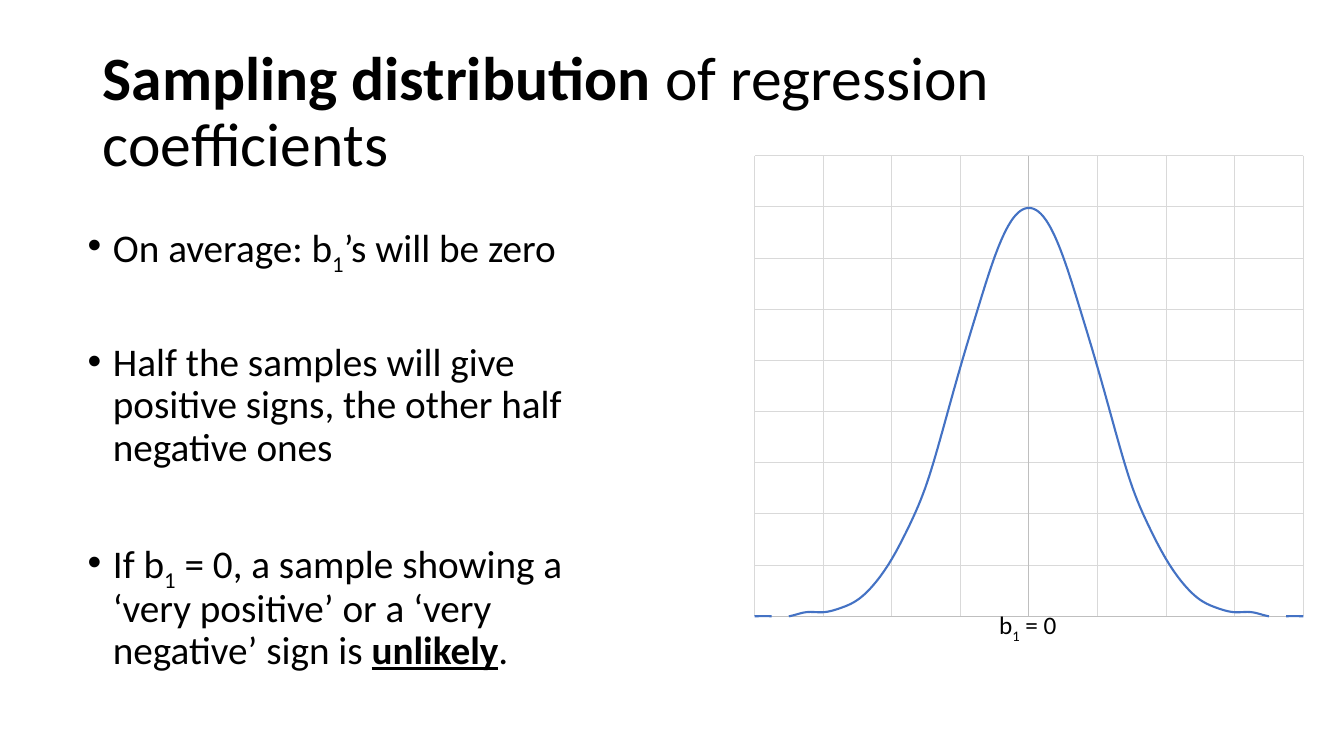
"""Build a slide on the sampling distribution of regression coefficients."""
from dataclasses import dataclass
from math import exp

from pptx import Presentation
from pptx.chart.data import XyChartData
from pptx.dml.color import RGBColor
from pptx.enum.chart import XL_CHART_TYPE, XL_TICK_LABEL_POSITION, XL_TICK_MARK
from pptx.enum.text import MSO_ANCHOR, MSO_AUTO_SIZE, PP_ALIGN
from pptx.util import Inches, Pt

SMOOTH = XL_CHART_TYPE.XY_SCATTER_SMOOTH_NO_MARKERS
NO_LABELS = XL_TICK_LABEL_POSITION.NONE
NO_TICKS = XL_TICK_MARK.NONE
LEFT = PP_ALIGN.LEFT
TOP, MIDDLE = MSO_ANCHOR.TOP, MSO_ANCHOR.MIDDLE
NO_FIT, FIT_SHAPE = MSO_AUTO_SIZE.NONE, MSO_AUTO_SIZE.SHAPE_TO_FIT_TEXT


@dataclass(frozen=True)
class Theme:
    """Fonts, type sizes and colours."""
    font: str = "Calibri"
    title: int = 44
    body: int = 28
    label: int = 18
    chart: int = 10
    ink: RGBColor = RGBColor(0, 0, 0)
    curve: RGBColor = RGBColor(0x44, 0x72, 0xC4)
    axis: RGBColor = RGBColor(0xBF, 0xBF, 0xBF)
    grid: RGBColor = RGBColor(0xD9, 0xD9, 0xD9)


THEME = Theme()
TITLE = [("Sampling distribution", "bold"), (" of regression coefficients", "")]
BULLETS = [
    [("On average: b", ""), ("1", "sub"), ("’s will be zero", "")],
    [("Half the samples will give positive signs, the other half negative ones", "")],
    [("If b", ""), ("1", "sub"),
     (" = 0, a sample showing a ‘very positive’ or a ‘very negative’ sign is ", ""),
     ("unlikely", "bold underline"), (".", "")],
]
LABEL = [("b", ""), ("1", "sub"), (" = 0", "")]
BOXES = {
    "title": (0.92, 0.4, 11.89, 1.45),
    "body": (0.77, 2.17, 5.67, 4.76),
    "chart": (7.37, 1.45, 5.67, 4.76),
    "label": (9.81, 6, 0.79, 0.4),
}
X_LIMIT, X_STEP = 4, 0.25
Y_MAX, Y_BANDS = 112.8, 9


def box(name):
    return [Inches(v) for v in BOXES[name]]


def place(sp, name, anchor):
    sp.left, sp.top, sp.width, sp.height = box(name)
    tf = sp.text_frame
    tf.word_wrap = True
    tf.auto_size = NO_FIT
    tf.vertical_anchor = anchor
    return tf


def add_runs(p, runs, size):
    for text, style in runs:
        r = p.add_run()
        r.text = text
        f = r.font
        f.name, f.size = THEME.font, Pt(size)
        f.color.rgb = THEME.ink
        f.bold = "bold" in style
        f.underline = "underline" in style
        if style == "sub":
            r._r.get_or_add_rPr().set("baseline", "-25000")


def add_bullets(tf):
    for i, runs in enumerate(BULLETS):
        p = tf.paragraphs[0] if i == 0 else tf.add_paragraph()
        p.line_spacing = 0.9
        p.space_before = Pt(50.4 if i else 10)
        pPr = p._p.get_or_add_pPr()
        pPr.set("marL", str(Inches(0.25)))
        pPr.set("indent", str(Inches(-0.25)))
        add_runs(p, runs, THEME.body)


def style_axis(axis, low, high, unit):
    axis.minimum_scale, axis.maximum_scale, axis.major_unit = low, high, unit
    axis.tick_label_position = NO_LABELS
    axis.major_tick_mark = axis.minor_tick_mark = NO_TICKS
    axis.has_major_gridlines = True
    for line, color in ((axis.format.line, THEME.axis),
                        (axis.major_gridlines.format.line, THEME.grid)):
        line.color.rgb = color
        line.width = Pt(0.75)


def add_curve(s):
    data = XyChartData()
    points = data.add_series("Series 1")
    steps = int(X_LIMIT / X_STEP)
    for i in range(-steps, steps + 1):
        x = i * X_STEP
        points.add_data_point(x, round(100 * exp(-x * x / 2)))
    chart = s.shapes.add_chart(SMOOTH, *box("chart"), data).chart
    chart.has_legend = chart.has_title = False
    chart.font.name, chart.font.size = THEME.font, Pt(THEME.chart)
    chart.font.color.rgb = THEME.ink
    chart.plots[0].vary_by_categories = False
    style_axis(chart.category_axis, -X_LIMIT, X_LIMIT, 1)
    style_axis(chart.value_axis, 0, Y_MAX, round(Y_MAX / Y_BANDS, 2))
    series = chart.plots[0].series[0]
    series._element.get_or_add_smooth().val = True
    series.format.line.color.rgb = THEME.curve
    series.format.line.width = Pt(1.5)


def main():
    prs = Presentation()
    prs.slide_width, prs.slide_height = Inches(13.33), Inches(7.5)
    s = prs.slides.add_slide(prs.slide_layouts[1])

    p = place(s.shapes.title, "title", MIDDLE).paragraphs[0]
    p.alignment = LEFT
    p.line_spacing = 0.9
    add_runs(p, TITLE, THEME.title)

    add_curve(s)
    add_bullets(place(s.placeholders[1], "body", TOP))

    tf = s.shapes.add_textbox(*box("label")).text_frame
    tf.word_wrap = False
    tf.auto_size = FIT_SHAPE
    add_runs(tf.paragraphs[0], LABEL, THEME.label)
    prs.save("out.pptx")


if __name__ == "__main__":
    main()
